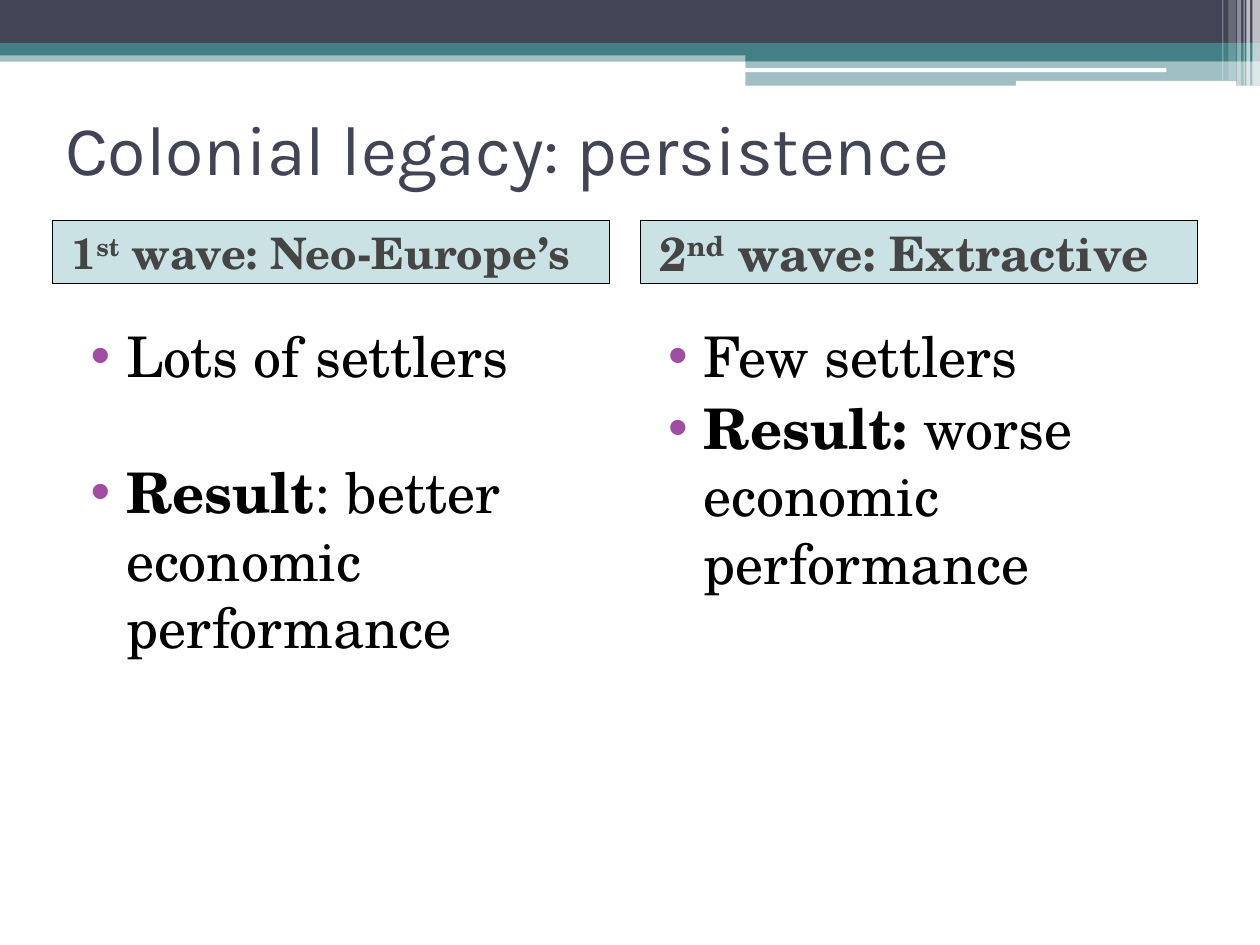
import dataclasses
import typing

import lxml.etree
import pptx
import pptx.dml.color
import pptx.enum.shapes
import pptx.enum.text
import pptx.oxml.ns
import pptx.util

Pt = pptx.util.Pt
Kind = pptx.enum.shapes.MSO_SHAPE
Anchor = pptx.enum.text.MSO_ANCHOR

COLORS = {
    "navy": "424456",
    "teal": "438086",
    "white": "FFFFFF",
    "panel": "328E97",
    "label": "454545",
    "black": "000000",
    "bullet": "A04DA3",
}
SERIF = "TeX Gyre Schola"
SANS = "Karla"


@dataclasses.dataclass
class Bar:
    left: float
    top: float
    width: float
    height: float
    color: str
    alpha: int = 100
    kind: typing.Any = Kind.RECTANGLE


@dataclasses.dataclass
class Span:
    text: str
    bold: bool = False
    raised: bool = False


@dataclasses.dataclass
class Item:
    spans: list[Span]
    before: float = 3


@dataclasses.dataclass
class Column:
    head: Item
    size: float
    head_left: float
    list_left: float
    items: list[Item]


BARS = [
    Bar(0, 28.8, 720, 6.5, "teal", 50),
    Bar(0, 0, 720, 24.5, "navy"),
    Bar(0, 24.5, 720, 7.2, "teal"),
    Bar(426, 28, 294, 7, "teal"),
    Bar(426, 35, 294, 14, "teal", 50),
    Bar(425.5, 39, 241, 2.2, "white", 100, Kind.ROUNDED_RECTANGLE),
    Bar(580.5, 46.2, 126, 2.8, "white", 100, Kind.ROUNDED_RECTANGLE),
    Bar(715.7, 0, 4.3, 49, "white", 65),
    Bar(712.2, 0, 2.2, 49, "white", 65),
    Bar(710.6, 0, 0.7, 49, "white", 60),
    Bar(707, 0, 2.2, 49, "white", 40),
    Bar(702, 0, 4.3, 46, "white", 20),
    Bar(698.4, 0, 0.7, 46, "white", 30),
]

COLUMNS = [
    Column(
        Item([Span("1", True), Span("st", True, True), Span(" wave: Neo-Europe’s", True)]),
        24.8, 30, 36,
        [
            Item([Span("Lots of settlers")]),
            Item([Span("Result", True), Span(": better economic performance")], 39.6),
        ],
    ),
    Column(
        Item([Span("2", True), Span("nd", True, True), Span(" wave: Extractive", True)]),
        27.2, 366, 366,
        [
            Item([Span("Few settlers")]),
            Item([Span("Result: ", True), Span("worse economic performance")]),
        ],
    ),
]


def get_rgb(color: str) -> pptx.dml.color.RGBColor:
    return pptx.dml.color.RGBColor.from_string(COLORS[color])


def add_tag(parent: typing.Any, tag: str, **attrs: str) -> typing.Any:
    return lxml.etree.SubElement(parent, pptx.oxml.ns.qn(tag), attrs)


def paint(shape: typing.Any, color: str, alpha: int) -> None:
    shape.fill.solid()
    shape.fill.fore_color.rgb = get_rgb(color)
    if alpha < 100:
        tint = shape._element.spPr.find(".//" + pptx.oxml.ns.qn("a:srgbClr"))
        add_tag(tint, "a:alpha", val=str(alpha * 1000))


def draw_bar(slide: typing.Any, bar: Bar) -> None:
    shape = slide.shapes.add_shape(
        bar.kind, Pt(bar.left), Pt(bar.top), Pt(bar.width), Pt(bar.height))
    shape.shadow.inherit = False
    shape.line.fill.background()
    paint(shape, bar.color, bar.alpha)


def place(shape: typing.Any, left: float, top: float, width: float,
          height: float, anchor: typing.Any) -> None:
    shape.left, shape.top = Pt(left), Pt(top)
    shape.width, shape.height = Pt(width), Pt(height)
    shape.text_frame.auto_size = pptx.enum.text.MSO_AUTO_SIZE.NONE
    shape.text_frame.word_wrap = True
    shape.text_frame.vertical_anchor = anchor


def style(run: typing.Any, face: str, size: float, color: str, bold: bool) -> None:
    run.font.name = face
    run.font.size = Pt(size)
    run.font.bold = bold
    run.font.color.rgb = get_rgb(color)


def write(para: typing.Any, item: Item, size: float, color: str,
          margin: float, indent: float) -> None:
    para.space_before = Pt(item.before)
    para.alignment = pptx.enum.text.PP_ALIGN.LEFT
    props = para._p.get_or_add_pPr()
    props.set("marL", str(Pt(margin)))
    props.set("indent", str(Pt(indent)))
    for span in item.spans:
        run = para.add_run()
        run.text = span.text
        style(run, SERIF, size, color, span.bold)
        if span.raised:
            run.font._element.set("baseline", "30000")


def add_bullet(para: typing.Any) -> None:
    props = para._p.get_or_add_pPr()
    add_tag(add_tag(props, "a:buClr"), "a:srgbClr", val=COLORS["bullet"])
    add_tag(props, "a:buChar", char="•")


def draw_column(head: typing.Any, body: typing.Any, column: Column) -> None:
    place(head, column.head_left, 126, 318, 36, Anchor.MIDDLE)
    paint(head, "panel", 25)
    head.line.color.rgb = get_rgb("black")
    head.line.width = Pt(0.25)
    write(head.text_frame.paragraphs[0], column.head, column.size, "label", 3.6, 0)

    place(body, column.list_left, 180, 318, 302.4, Anchor.TOP)
    frame = body.text_frame
    for index, item in enumerate(column.items):
        para = frame.add_paragraph() if index else frame.paragraphs[0]
        write(para, item, 32, "black", 28.8, -20.2)
        add_bullet(para)


def main() -> None:
    deck = pptx.Presentation()
    deck.slide_width, deck.slide_height = Pt(720), Pt(540)
    slide = deck.slides.add_slide(deck.slide_layouts.get_by_name("Comparison"))
    for bar in BARS:
        draw_bar(slide, bar)

    title = slide.shapes.title
    place(title, 30, 42, 660, 84, Anchor.MIDDLE)
    title.text_frame.text = "Colonial legacy: persistence"
    para = title.text_frame.paragraphs[0]
    para.alignment = pptx.enum.text.PP_ALIGN.LEFT
    style(para.runs[0], SANS, 40, "navy", False)

    holders = list(slide.placeholders)[1:]
    for head, body, column in zip(holders[::2], holders[1::2], COLUMNS):
        draw_column(head, body, column)
    deck.save("out.pptx")


if __name__ == "__main__":
    main()
